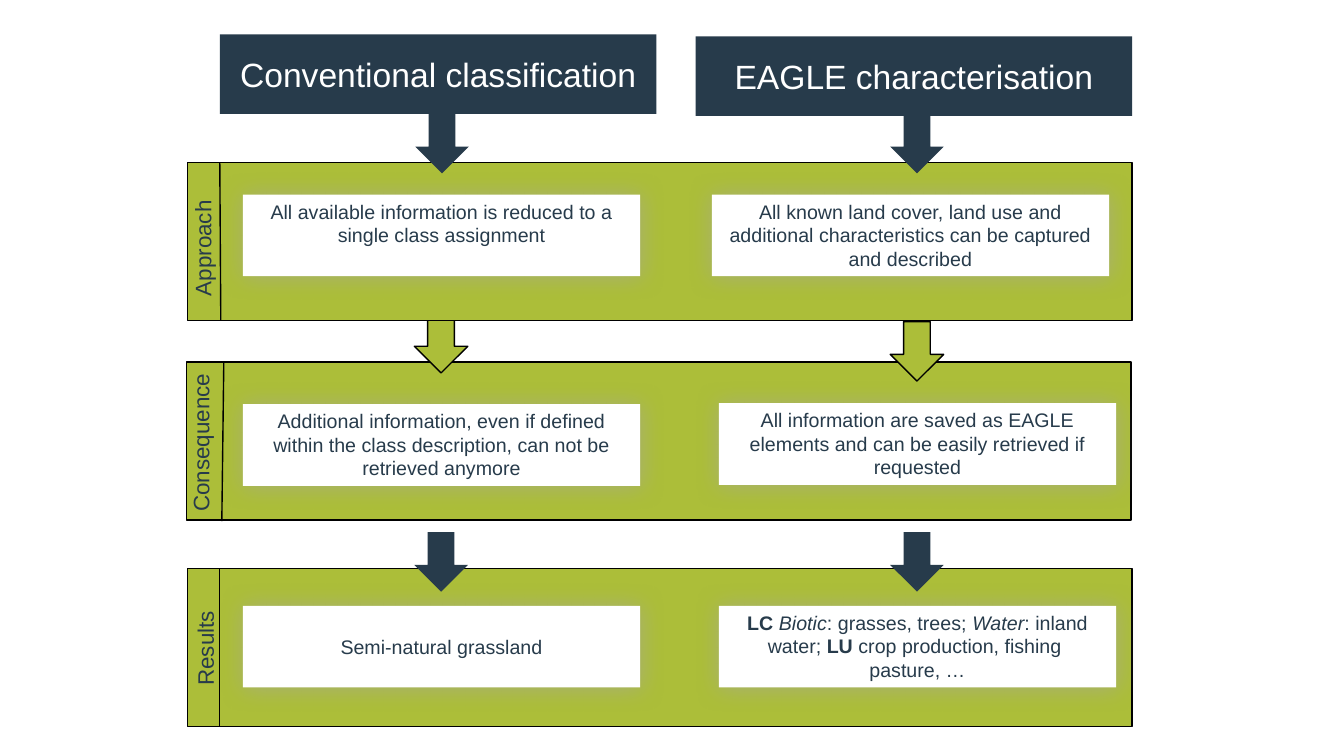
from lxml import etree
from pptx import Presentation
from pptx.dml.color import RGBColor
from pptx.enum.shapes import MSO_CONNECTOR, MSO_SHAPE
from pptx.enum.text import MSO_ANCHOR, PP_ALIGN
from pptx.oxml import parse_xml
from pptx.oxml.ns import qn
from pptx.util import Inches, Pt

NAVY = RGBColor(0x27, 0x3B, 0x4B)
GREEN = RGBColor(0xAC, 0xBE, 0x39)
WHITE = RGBColor(0xFF, 0xFF, 0xFF)
BLACK = RGBColor(0, 0, 0)

SOFT_SHADOW = (
    '<a:effectLst xmlns:a="http://schemas.openxmlformats.org/drawingml/2006/main">'
    '<a:outerShdw blurRad="215900" dist="12700" dir="2700000" algn="ctr" rotWithShape="0">'
    '<a:srgbClr val="A5A5A5"><a:alpha val="60000"/></a:srgbClr>'
    '</a:outerShdw></a:effectLst>'
)

prs = Presentation()
prs.slide_width, prs.slide_height = Inches(13.33), Inches(7.5)
s = prs.slides.add_slide(prs.slide_layouts[6])


def add_block(kind, box, fill, outlined=False):
    sp = s.shapes.add_shape(kind, *map(Inches, box))
    sp.shadow.inherit = False
    sp.fill.solid()
    sp.fill.fore_color.rgb = fill
    if outlined:
        sp.line.color.rgb = BLACK
        sp.line.width = Pt(1)
    else:
        sp.line.fill.background()
    return sp


def write(p, runs, size, color):
    """Add (text, font attributes) runs to a paragraph."""
    for text, attrs in runs:
        r = p.add_run()
        r.text = text
        fmt = {"name": "Arial", "size": Pt(size), **attrs}
        for name, value in fmt.items():
            setattr(r.font, name, value)
        r.font.color.rgb = color


BAND_W, BAND_H = 9.37, 1.57
ARROW_W, ARROW_H = 0.53, 0.59
BOX_W, BOX_H = 3.94, 0.81

# Bands and arrows, from back to front
add_block(MSO_SHAPE.RECTANGLE, (1.85, 3.59, BAND_W, BAND_H), GREEN, True)
for left, top in [(4.11, 3.11), (8.83, 3.19)]:
    add_block(MSO_SHAPE.DOWN_ARROW, (left, top, ARROW_W, ARROW_H), GREEN, True)
for top in (1.61, 5.64):
    add_block(MSO_SHAPE.RECTANGLE, (1.86, top, BAND_W, BAND_H), GREEN, True)

# Column headings
for left, top, heading in [(2.18, 0.34, "Conventional classification"),
                           (6.9, 0.36, "EAGLE characterisation")]:
    sp = add_block(MSO_SHAPE.RECTANGLE, (left, top, 4.33, 0.79), NAVY)
    sp.text_frame.vertical_anchor = MSO_ANCHOR.MIDDLE
    p = sp.text_frame.paragraphs[0]
    p.alignment = PP_ALIGN.CENTER
    write(p, [(heading, {})], 24, WHITE)

for left, top in [(4.12, 1.13), (8.83, 1.13), (4.11, 5.28), (8.83, 5.28)]:
    add_block(MSO_SHAPE.DOWN_ARROW, (left, top, ARROW_W, ARROW_H), NAVY)

# White boxes: left, top, anchor, paragraphs of runs
TOP, MIDDLE = MSO_ANCHOR.TOP, MSO_ANCHOR.MIDDLE
boxes = [
    (2.41, 1.93, TOP, [[("All available information is reduced to a single class assignment", {})]]),
    (7.06, 1.93, TOP, [[("All known land cover, land use and additional characteristics "
                         "can be captured and described", {})]]),
    (2.41, 4.01, TOP, [[("Additional information, even if defined within the class "
                         "description, can not be retrieved anymore", {})]]),
    (7.13, 4.0, TOP, [[("All information are saved as EAGLE elements and can be easily "
                        "retrieved if requested", {})]]),
    (2.41, 6.01, MIDDLE, [[("Semi-natural grassland", {})]]),
    (7.13, 6.01, TOP, [
        [("LC ", {"bold": True}), ("Biotic", {"italic": True}), (": grasses, trees; ", {}),
         ("Water", {"italic": True}), (": inland water; ", {}), ("LU", {"bold": True}),
         (" crop production, fishing ", {})],
        [("pasture, …", {})],
    ]),
]
for left, top, anchor, paragraphs in boxes:
    sp = add_block(MSO_SHAPE.RECTANGLE, (left, top, BOX_W, BOX_H), WHITE)
    sp.element.spPr.replace(sp.element.spPr.find(qn("a:effectLst")), parse_xml(SOFT_SHADOW))
    tf = sp.text_frame
    tf.word_wrap = True
    tf.vertical_anchor = anchor
    for i, runs in enumerate(paragraphs):
        p = tf.add_paragraph() if i else tf.paragraphs[0]
        p.alignment = PP_ALIGN.CENTER
        write(p, runs, 14, NAVY)

# Rotated row labels with their dividers
rows = [
    ("Approach", (1.43, 2.27, 1.16, 0.37), (2.18, 1.61, 2.19, 3.18)),
    ("Consequence", (1.2, 4.2, 1.58, 0.37), (2.22, 3.59, 2.2, 5.17)),
    ("Results", (1.56, 6.24, 0.95, 0.37), (2.18, 5.64, 2.18, 7.21)),
]
for label, box, ends in rows:
    tb = s.shapes.add_textbox(*map(Inches, box))
    tb.rotation = 270
    tb.text_frame.word_wrap = False
    write(tb.text_frame.paragraphs[0], [(label, {})], 16, NAVY)
    divider = s.shapes.add_connector(MSO_CONNECTOR.STRAIGHT, *map(Inches, ends))
    divider.line.color.rgb = BLACK
    divider.line.width = Pt(1)
    etree.SubElement(divider.element.spPr, qn("a:effectLst"))

prs.save("out.pptx")
